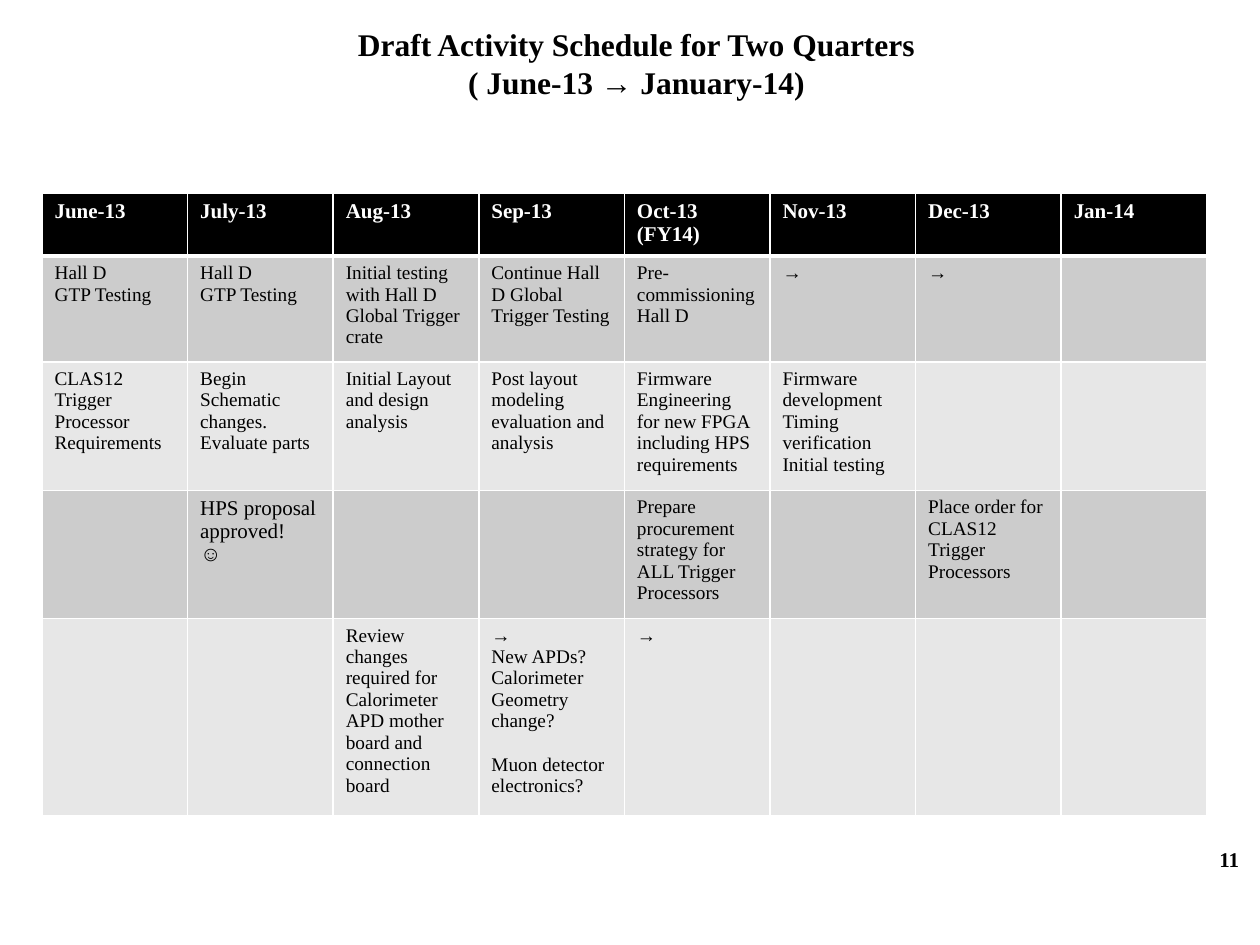
from lxml import etree
from pptx import Presentation
from pptx import util as u
from pptx.dml.color import RGBColor
from pptx.enum import text
from pptx.oxml import ns

SCALE = 914400 // 126
FONT = "Times New Roman"
BLACK, WHITE = "000000", "FFFFFF"
BANDS = ["CCCCCC", "E7E7E7"]

MONTHS = ["June-13", "July-13", "Aug-13", "Sep-13",
          "Oct-13 (FY14)", "Nov-13", "Dec-13", "Jan-14"]
# One list per row; a blank line inside a cell becomes paragraph spacing.
ACTIVITIES = [
    ["Hall D\nGTP Testing", "Hall D\nGTP Testing",
     "Initial testing with Hall D Global Trigger crate",
     "Continue Hall D Global Trigger Testing",
     "Pre-commissioning\nHall D", "→", "→", ""],
    ["CLAS12\nTrigger Processor Requirements",
     "Begin Schematic changes. Evaluate parts",
     "Initial Layout and design analysis",
     "Post layout modeling evaluation and analysis",
     "Firmware Engineering for new FPGA including HPS requirements",
     "Firmware development\nTiming verification\nInitial testing", "", ""],
    ["", "HPS proposal approved!\n☺", "", "",
     "Prepare procurement strategy for ALL Trigger Processors", "",
     "Place order for\nCLAS12 Trigger Processors", ""],
    ["", "",
     "Review changes required for Calorimeter APD mother board and connection board",
     "→\nNew APDs?\nCalorimeter Geometry change?\n\nMuon detector electronics?",
     "→", "", "", ""],
]
ROW_HEIGHTS = [62, 106, 128, 128, 197]
MILESTONE = (3, 1)


def px(length):
    return u.Emu(length * SCALE)


def rgb(value):
    return RGBColor.from_string(value)


def write(frame, content, size=11, color=BLACK, bold=False, align=None, gap=12.65):
    """Fill a frame: one paragraph per line, with a gap where a line is blank."""
    paragraph = None
    for block_index, block in enumerate(content.split("\n\n")):
        for line_index, line in enumerate(block.split("\n")):
            paragraph = frame.add_paragraph() if paragraph else frame.paragraphs[0]
            paragraph.text = line
            paragraph.alignment = align
            if block_index and not line_index:
                paragraph.space_before = u.Pt(gap)
            for run in paragraph.runs:
                run.font.name = FONT
                run.font.size = u.Pt(size)
                run.font.bold = bold
                run.font.color.rgb = rgb(color)


def draw_borders(cell, color=WHITE, **widths):
    """Draw the L, R, T and B borders, each 1 pt unless given."""
    properties = cell._tc.get_or_add_tcPr()
    for side in "LRTB":
        line = etree.SubElement(properties, ns.qn(f"a:ln{side}"),
                                w=str(u.Pt(widths.get(side, 1))))
        fill = etree.SubElement(line, ns.qn("a:solidFill"))
        etree.SubElement(fill, ns.qn("a:srgbClr"), val=color)


class Deck:
    def __init__(self, width, height):
        self.presentation = Presentation()
        self.presentation.slide_width = px(width)
        self.presentation.slide_height = px(height)
        self.slide = self.presentation.slides.add_slide(
            self.presentation.slide_layouts[6])

    def label(self, box, content, wrap=True, anchor=text.MSO_ANCHOR.TOP, **style):
        frame = self.slide.shapes.add_textbox(*map(px, box)).text_frame
        frame.word_wrap = wrap
        frame.vertical_anchor = anchor
        write(frame, content, bold=True, **style)

    def schedule(self, left, top, width, heights, header, rows):
        table = self.slide.shapes.add_table(
            len(heights), len(header), px(left), px(top),
            px(width), px(sum(heights))).table
        for column in table.columns:
            column.width = u.Emu(px(width) // len(header))
        for r, (height, contents) in enumerate(zip(heights, [header] + rows)):
            table.rows[r].height = px(height)
            for c, content in enumerate(contents):
                self.schedule_cell(table.cell(r, c), r, c, content)

    def schedule_cell(self, cell, r, c, content):
        draw_borders(cell, T=3 if r == 1 else 1, B=3 if r == 0 else 1)
        cell.fill.solid()
        cell.fill.fore_color.rgb = rgb(BANDS[(r - 1) % 2] if r else BLACK)
        if r == 0:
            write(cell.text_frame, content, size=12, color=WHITE, bold=True)
        else:
            write(cell.text_frame, content, size=12 if (r, c) == MILESTONE else 11)


def main():
    deck = Deck(1260, 945)
    deck.label((60, 10, 1153, 105),
               "Draft Activity Schedule for Two Quarters\v( June-13 → January-14)",
               size=18, align=text.PP_ALIGN.CENTER, anchor=text.MSO_ANCHOR.MIDDLE)
    deck.label((1207, 840, 45, 38), "11", wrap=False, size=12)
    deck.schedule(42, 193, 1165, ROW_HEIGHTS, MONTHS, ACTIVITIES)
    deck.presentation.save("out.pptx")


if __name__ == "__main__":
    main()
